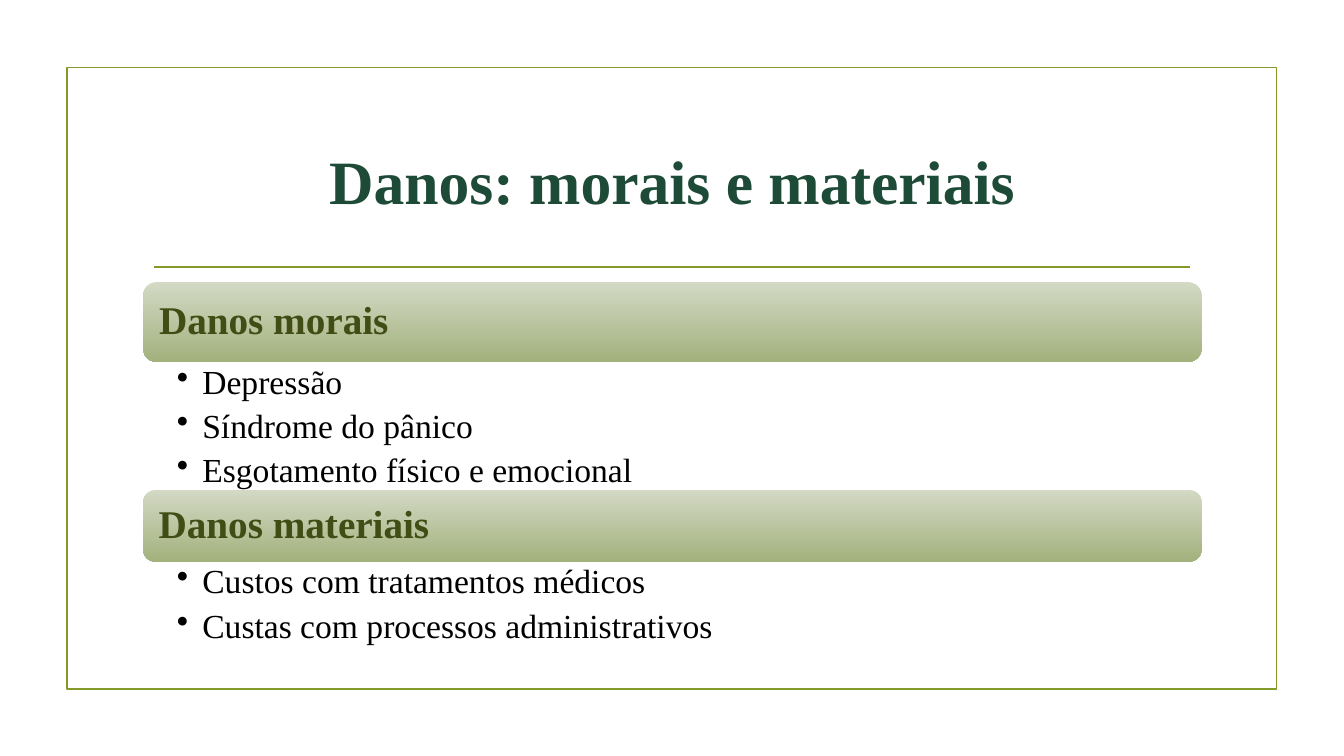
"""Build the slide on moral and material damages."""
from dataclasses import dataclass

from lxml.etree import SubElement
from pptx import Presentation
from pptx.dml.color import RGBColor
from pptx.enum.shapes import MSO_CONNECTOR, MSO_SHAPE
from pptx.enum.text import MSO_ANCHOR, PP_ALIGN
from pptx.oxml.ns import qn
from pptx.slide import Slide
from pptx.text.text import TextFrame
from pptx.util import Cm, Pt

FONT = "Times New Roman"
OLIVE = "83992A"
LEFT, WIDTH = 3.61, 26.67


@dataclass
class Section:
    heading: str
    items: list[str]
    top: float
    bar_height: float
    list_height: float


SECTIONS = [
    Section("Danos morais",
            ["Depressão", "Síndrome do pânico", "Esgotamento físico e emocional"],
            7.11, 2.01, 3.23),
    Section("Danos materiais",
            ["Custos com tratamentos médicos", "Custas com processos administrativos"],
            12.35, 1.8, 2.95),
]


def rgb(value: str) -> RGBColor:
    return RGBColor.from_string(value)


def set_frame(tf: TextFrame, left: float, top: float, right: float,
              anchor: MSO_ANCHOR) -> None:
    tf.word_wrap = True
    tf.vertical_anchor = anchor
    tf.margin_left, tf.margin_right = Cm(left), Cm(right)
    tf.margin_top = tf.margin_bottom = Cm(top)


def add_line(tf: TextFrame, index: int, text: str, size: int, color: str,
             bold: bool = False, align: PP_ALIGN = PP_ALIGN.LEFT,
             spacing: float = 0.9, bullet: bool = False) -> None:
    p = tf.add_paragraph() if index else tf.paragraphs[0]
    p.alignment = align
    p.line_spacing = spacing
    if bullet:
        p.space_after = Pt(5.8)
        p.level = 1
        pPr = p._p.get_or_add_pPr()
        pPr.set("marL", str(Cm(0.64)))
        pPr.set("indent", str(-Cm(0.64)))
        SubElement(pPr, qn("a:buChar")).set("char", "•")
    r = p.add_run()
    r.text = text
    r.font.name, r.font.size, r.font.bold = FONT, Pt(size), bold
    r.font.color.rgb = rgb(color)


def add_frame(s: Slide) -> None:
    sp = s.shapes.add_shape(MSO_SHAPE.RECTANGLE, Cm(1.69), Cm(1.7), Cm(30.48), Cm(15.67))
    sp.shadow.inherit = False
    sp.fill.background()
    sp.line.color.rgb = rgb(OLIVE)
    sp.line.width = Pt(1.25)
    rule = s.shapes.add_connector(MSO_CONNECTOR.STRAIGHT, Cm(3.89), Cm(6.73), Cm(30), Cm(6.73))
    rule.line.color.rgb = rgb(OLIVE)
    rule.line.width = Pt(1.25)
    SubElement(rule._element.spPr, qn("a:effectLst"))


def add_title(s: Slide, text: str) -> None:
    tf = s.shapes.add_textbox(Cm(LEFT), Cm(2.72), Cm(WIDTH), Cm(3.63)).text_frame
    set_frame(tf, 0.25, 0.13, 0.25, MSO_ANCHOR.MIDDLE)
    add_line(tf, 0, text, 44, "1E4B38", bold=True, align=PP_ALIGN.CENTER, spacing=1.0)


def add_section(s: Slide, section: Section) -> None:
    bar = s.shapes.add_shape(MSO_SHAPE.ROUNDED_RECTANGLE, Cm(LEFT), Cm(section.top),
                             Cm(WIDTH), Cm(section.bar_height))
    bar.shadow.inherit = False
    bar.line.fill.background()
    bar.fill.gradient()
    bar.fill.gradient_angle = 270
    for stop, color in zip(bar.fill.gradient_stops, ("D3D9C4", "A3B17D")):
        stop.color.rgb = rgb(color)
    set_frame(bar.text_frame, 0.3, 0.3, 0.3, MSO_ANCHOR.MIDDLE)
    add_line(bar.text_frame, 0, section.heading, 28, "414D15", bold=True)

    tf = s.shapes.add_textbox(Cm(LEFT), Cm(section.top + section.bar_height),
                              Cm(WIDTH), Cm(section.list_height)).text_frame
    set_frame(tf, 0.85, 0.08, 0.48, MSO_ANCHOR.TOP)
    for i, item in enumerate(section.items):
        add_line(tf, i, item, 24, "000000", bullet=True)


def main() -> None:
    prs = Presentation()
    prs.slide_width, prs.slide_height = Cm(33.87), Cm(19.05)
    s = prs.slides.add_slide(prs.slide_layouts[6])
    add_frame(s)
    add_title(s, "Danos: morais e materiais")
    for section in SECTIONS:
        add_section(s, section)
    prs.save("out.pptx")


if __name__ == "__main__":
    main()
